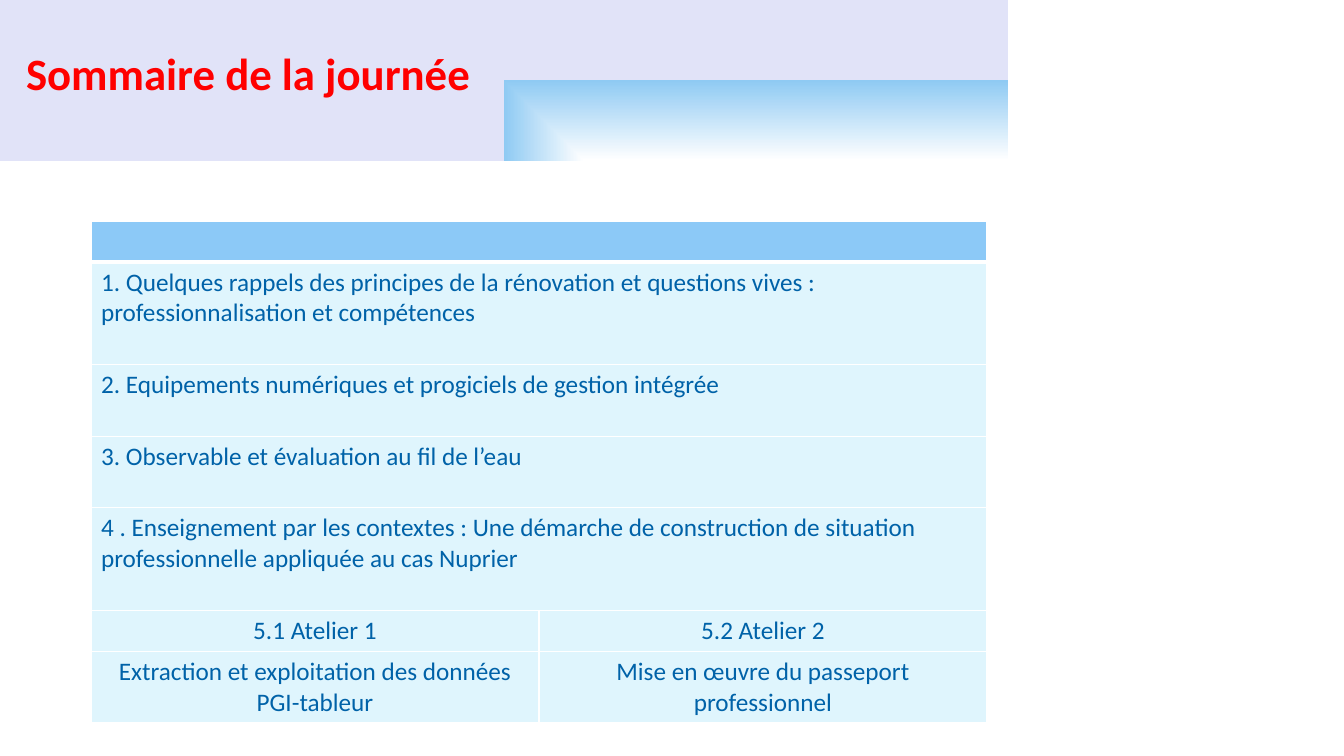
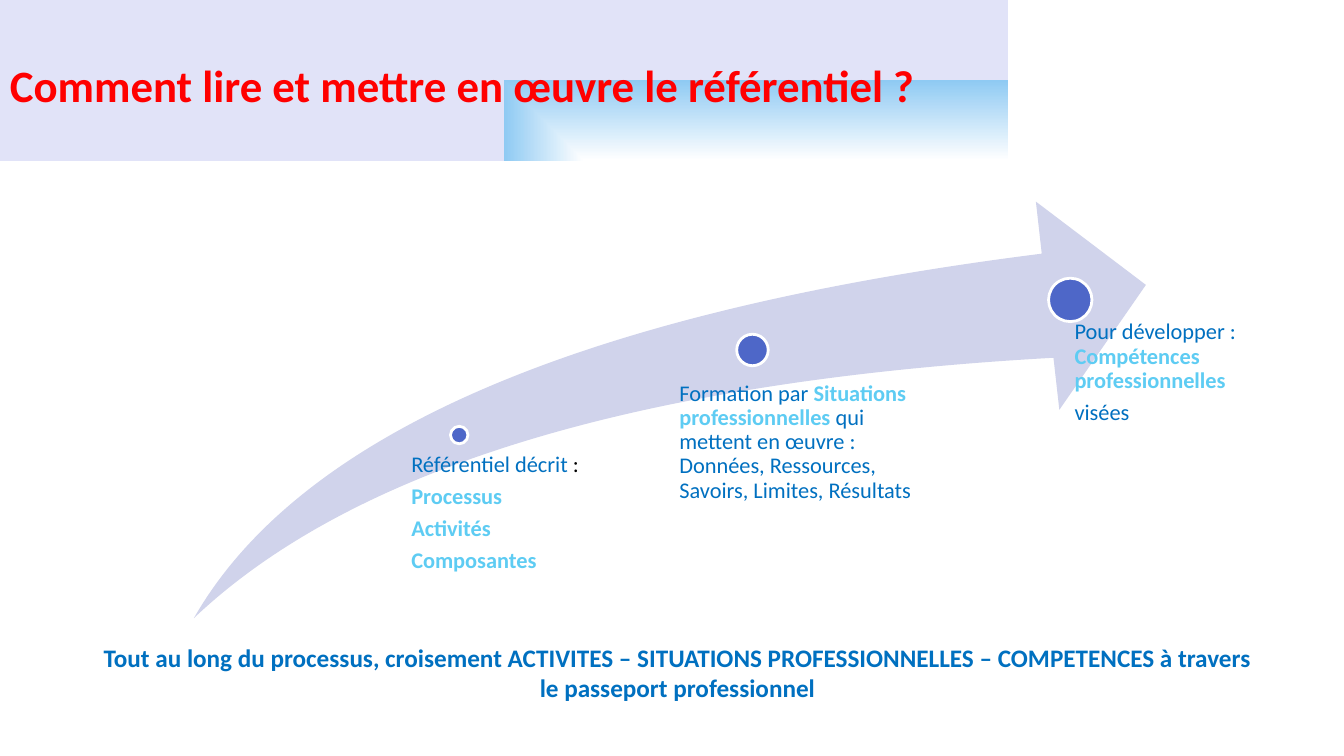
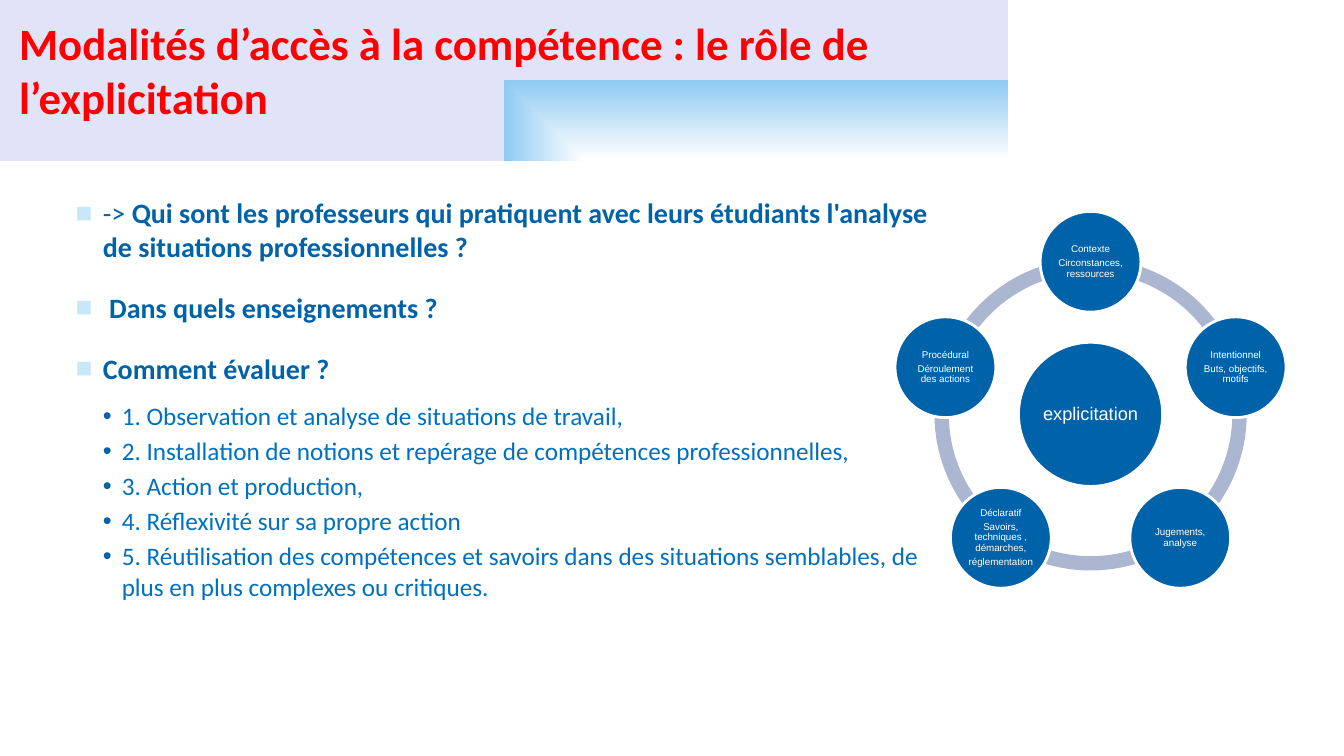
from math import cos, radians, sin

from lxml.etree import SubElement
from pptx import Presentation
from pptx.dml.color import RGBColor
from pptx.enum.shapes import MSO_SHAPE
from pptx.enum.text import MSO_ANCHOR, PP_ALIGN
from pptx.oxml import parse_xml
from pptx.oxml.ns import nsdecls, qn
from pptx.util import Pt

WHITE, RED, NAVY, BLUE, SKY = "FFFFFF", "FF0000", "0062A8", "0070C0", "5ECCF3"
INDIGO, LAVENDER, RING = "4E67C8", "D0D3EB", "ABB7D1"
HEADER, ROW, BULLET = "8CC9F7", "DFF5FD", "C9E8F7"
BANNER_STOPS = [(0, WHITE), (100, "8FCAF3"), (100, "C1C7F2"), (100, "E1E3F8")]


def paint(fill, colour):
    fill.solid()
    fill.fore_color.rgb = RGBColor.from_string(colour)


def write(frame, paragraphs, size, face="Calibri", align=PP_ALIGN.LEFT,
          spacing=None, after=None, pad=None):
    """Fill a text frame; each paragraph is a list of (text, colour, bold) runs."""
    frame.word_wrap = True
    if pad is not None:
        frame.margin_left = frame.margin_right = Pt(pad)
        frame.margin_top = frame.margin_bottom = Pt(pad)
    for index, runs in enumerate(paragraphs):
        paragraph = frame.add_paragraph() if index else frame.paragraphs[0]
        paragraph.alignment = align
        if spacing:
            paragraph.line_spacing = spacing
        if after:
            paragraph.space_after = Pt(after)
        for text, colour, bold in runs:
            run = paragraph.add_run()
            run.text = text
            run.font.name = face
            run.font.size = Pt(size)
            run.font.bold = bold
            paint(run.font.fill, colour)


deck = Presentation()
deck.slide_width, deck.slide_height = Pt(960), Pt(540)

# Banner and title of every slide
titles = [
    ("Sommaire de la journée", 11.5, 29, 400),
    ("Comment lire et mettre en œuvre le référentiel ?", 0, 37.5, 700),
    ("Modalités d’accès à la compétence : le rôle de l’explicitation", 6.5, 8, 649),
]
slides = []
for title, left, top, width in titles:
    slide = deck.slides.add_slide(deck.slide_layouts[6])
    slides.append(slide)
    banner = slide.shapes.add_shape(MSO_SHAPE.RECTANGLE, 0, 0, Pt(720), Pt(114.75))
    banner.shadow.inherit = False
    banner.line.fill.background()
    banner.fill.gradient()
    gradient = banner.fill._xPr.find(qn("a:gradFill"))
    stops = "".join(
        f'<a:gs pos="{position * 1000}"><a:srgbClr val="{colour}"/></a:gs>'
        for position, colour in BANNER_STOPS)
    gradient.getparent().replace(gradient, parse_xml(
        f'<a:gradFill {nsdecls("a")} rotWithShape="1"><a:gsLst>{stops}</a:gsLst>'
        '<a:path path="rect"><a:fillToRect l="100000" t="100000"/></a:path></a:gradFill>'))
    heading = slide.shapes.add_textbox(Pt(left), Pt(top), Pt(width), Pt(46))
    write(heading.text_frame, [[(title, RED, True)]], 32)
agenda_slide, process_slide, method_slide = slides

# Slide 1: agenda, one tuple of cells per row; a single cell spans both columns
agenda = [
    (29.2, [[]]),
    (73.2, [["1. Quelques rappels des principes de la rénovation et questions vives : "
             "professionnalisation et compétences"]]),
    (51.2, [["2. Equipements numériques et progiciels de gestion intégrée"]]),
    (51.2, [["3. Observable et évaluation au fil de l’eau"]]),
    (73.2, [["4 . Enseignement par les contextes : Une démarche de construction de "
             "situation professionnelle appliquée au cas Nuprier"]]),
    (29.2, [["5.1 Atelier 1"], ["5.2 Atelier 2"]]),
    (51.2, [["Extraction et exploitation des données", "PGI-tableur"],
            ["Mise en œuvre du passeport professionnel"]]),
]
table = agenda_slide.shapes.add_table(
    len(agenda), 2, Pt(65), Pt(158), Pt(640), Pt(358)).table
for column in table.columns:
    column.width = Pt(320)
for row, (height, texts) in enumerate(agenda):
    table.rows[row].height = Pt(height)
    for column in range(2):
        cell = table.cell(row, column)
        for side in ("lnL", "lnR", "lnT", "lnB"):
            thick = (row, side) in ((0, "lnB"), (1, "lnT"))
            cell._tc.get_or_add_tcPr().append(parse_xml(
                f'<a:{side} {nsdecls("a")} w="{Pt(3 if thick else 1)}">'
                f'<a:solidFill><a:srgbClr val="{WHITE}"/></a:solidFill></a:{side}>'))
        paint(cell.fill, ROW if row else HEADER)
    if len(texts) == 1:
        table.cell(row, 0).merge(table.cell(row, 1))
    for column, lines in enumerate(texts):
        write(table.cell(row, column).text_frame,
              [[(line, NAVY, False)] for line in lines], 18,
              align=PP_ALIGN.CENTER if len(texts) == 2 else PP_ALIGN.LEFT)

# Slide 2: milestones along a rising arrow
arrow = process_slide.shapes.add_shape(
    MSO_SHAPE.SWOOSH_ARROW, Pt(138.5), Pt(144), Pt(680), Pt(297.5))
arrow.shadow.inherit = False
arrow.adjustments[0] = arrow.adjustments[1] = 0.25
paint(arrow.fill, LAVENDER)
arrow.line.fill.background()

# Marker centre and diameter, then label box and label
milestones = [
    (328, 310.75, 12.5, (293.75, 324, 148, 86), [
        [("Référentiel décrit ", BLUE, False), (":", "000000", False)],
        [("Processus", SKY, True)],
        [("Activités", SKY, True)],
        [("Composantes", SKY, True)]]),
    (537.5, 250, 22.5, (485.25, 273, 176.5, 125), [
        [("Formation par ", BLUE, False),
         ("Situations professionnelles ", SKY, True),
         ("qui mettent en œuvre : Données, Ressources, Savoirs, Limites, Résultats",
          BLUE, False)]]),
    (764.5, 214.25, 31, (767.5, 229, 126.75, 207), [
        [("Pour développer : ", BLUE, False),
         ("Compétences professionnelles", SKY, True)],
        [("visées", BLUE, False)]]),
]
for x, y, diameter, box, paragraphs in milestones:
    marker = process_slide.shapes.add_shape(
        MSO_SHAPE.OVAL, Pt(x - diameter / 2), Pt(y - diameter / 2), Pt(diameter), Pt(diameter))
    marker.shadow.inherit = False
    paint(marker.fill, INDIGO)
    paint(marker.line.fill, WHITE)
    marker.line.width = Pt(2)
    label = process_slide.shapes.add_textbox(*map(Pt, box))
    write(label.text_frame, paragraphs, 16, spacing=0.9, after=5.6, pad=0)

conclusion = process_slide.shapes.add_textbox(Pt(66), Pt(455), Pt(836), Pt(51))
write(conclusion.text_frame, [[(
    "Tout au long du processus, croisement ACTIVITES – SITUATIONS PROFESSIONNELLES – "
    "COMPETENCES à travers le passeport professionnel", BLUE, True)]],
    18, align=PP_ALIGN.CENTER)

# Slide 3: questions and steps
questions = [
    [("-> ", NAVY, False),
     ("Qui sont les professeurs qui pratiquent avec leurs étudiants l'analyse de "
      "situations professionnelles ?", NAVY, True)],
    [(" Dans quels enseignements ?", NAVY, True)],
    [("Comment évaluer ?", NAVY, True)],
]
steps = [
    "1. Observation et analyse de situations de travail,",
    "2. Installation de notions et repérage de compétences professionnelles,",
    "3. Action et production,",
    "4. Réflexivité sur sa propre action",
    "5. Réutilisation des compétences et savoirs dans des situations semblables, "
    "de plus en plus complexes ou critiques.",
]
body = method_slide.shapes.add_textbox(Pt(54), Pt(139.75), Pt(612), Pt(335)).text_frame
write(body, questions + [[(step, BLUE, False)] for step in steps], 20, pad=0)
for index, paragraph in enumerate(body.paragraphs):
    if index < len(questions):
        margin, hanging, before, after, symbol, tint = 19.5, 19.5, 11.5, 8, "■", BULLET
    else:
        margin, hanging, before, after, symbol, tint = 33, 13.5, 3.4, 0, "•", NAVY
        paragraph.level = 1
        paragraph.runs[0].font.size = Pt(18)
    paragraph.space_before = Pt(before if index else 0)
    paragraph.space_after = Pt(after)
    properties = paragraph._p.get_or_add_pPr()
    properties.set("marL", str(Pt(margin)))
    properties.set("indent", str(-Pt(hanging)))
    SubElement(SubElement(properties, qn("a:buClr")), qn("a:srgbClr")).set("val", tint)
    SubElement(properties, qn("a:buFont")).set("typeface", "Arial")
    SubElement(properties, qn("a:buChar")).set("char", symbol)

# Slide 3: five facets on a ring around the hub
CENTRE_X, CENTRE_Y, ORBIT, RING_SIZE = 779, 296, 109, 223
facets = [
    ["Contexte", "Circonstances, ressources"],
    ["Intentionnel", "Buts, objectifs, motifs"],
    ["Jugements, analyse"],
    ["Déclaratif", "Savoirs, techniques , démarches,", "réglementation"],
    ["Procédural", "Déroulement des actions"],
]
step_angle = 360 / len(facets)
discs = [(CENTRE_X, CENTRE_Y, 103, 13, ["explicitation"])]
for index, lines in enumerate(facets):
    angle = (270 + index * step_angle) % 360
    arc = method_slide.shapes.add_shape(
        MSO_SHAPE.BLOCK_ARC, Pt(CENTRE_X - RING_SIZE / 2), Pt(CENTRE_Y - RING_SIZE / 2),
        Pt(RING_SIZE), Pt(RING_SIZE))
    arc.shadow.inherit = False
    # Angles are stored in 60000ths of a degree, adjustments in 100000ths
    arc.adjustments[0] = angle * 0.6
    arc.adjustments[1] = (angle + step_angle) % 360 * 0.6
    arc.adjustments[2] = 0.046
    paint(arc.fill, RING)
    arc.line.fill.background()
    discs.append((CENTRE_X + ORBIT * cos(radians(angle)),
                  CENTRE_Y + ORBIT * sin(radians(angle)), 72, 7, lines))

for x, y, diameter, size, lines in discs:
    disc = method_slide.shapes.add_shape(
        MSO_SHAPE.OVAL, Pt(x - diameter / 2), Pt(y - diameter / 2), Pt(diameter), Pt(diameter))
    disc.shadow.inherit = False
    paint(disc.fill, NAVY)
    paint(disc.line.fill, WHITE)
    disc.line.width = Pt(2)
    disc.text_frame.vertical_anchor = MSO_ANCHOR.MIDDLE
    write(disc.text_frame, [[(line, WHITE, False)] for line in lines], size, "Arial",
          PP_ALIGN.CENTER, spacing=0.9, after=size * 0.35, pad=0.7)

deck.save("out.pptx")
